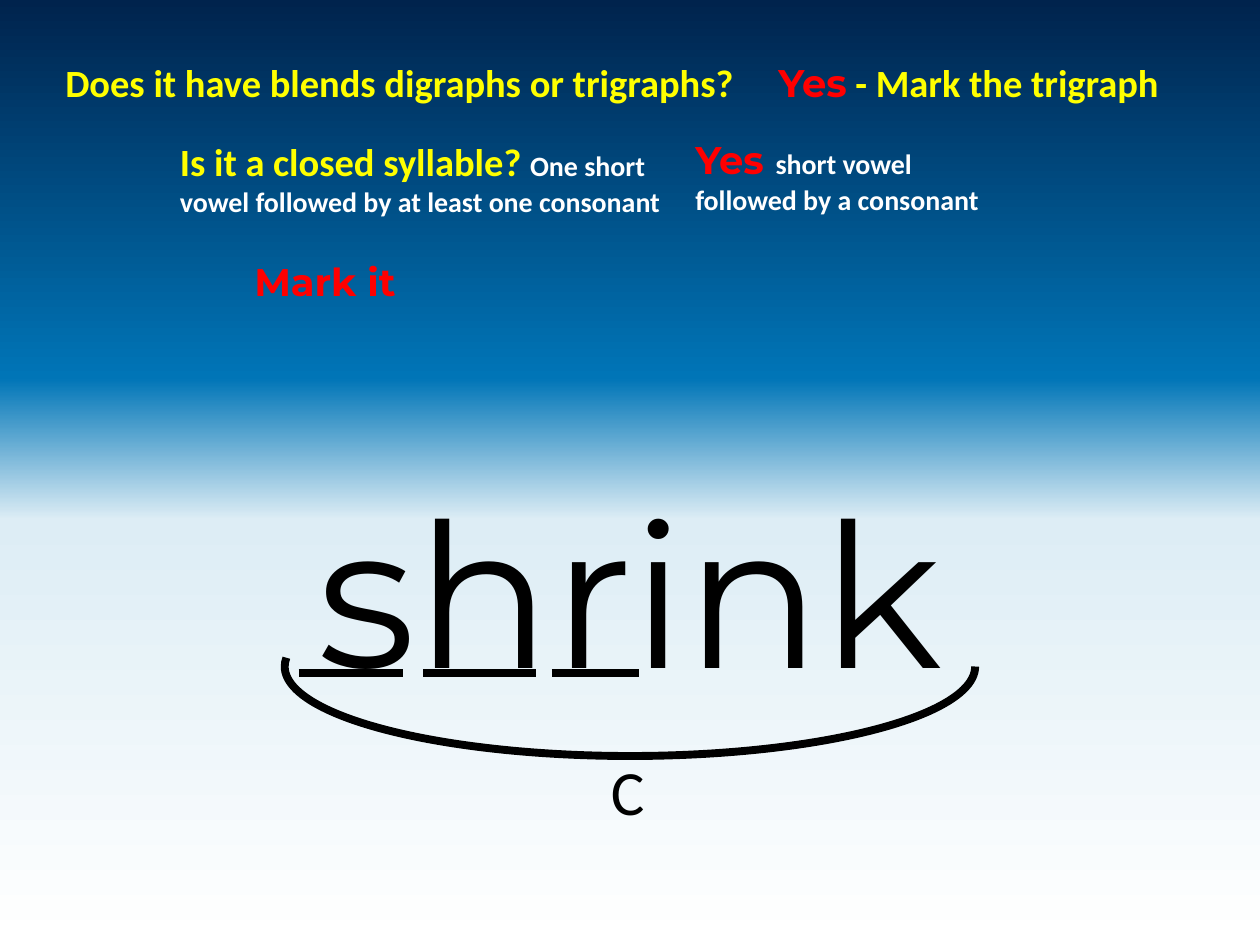
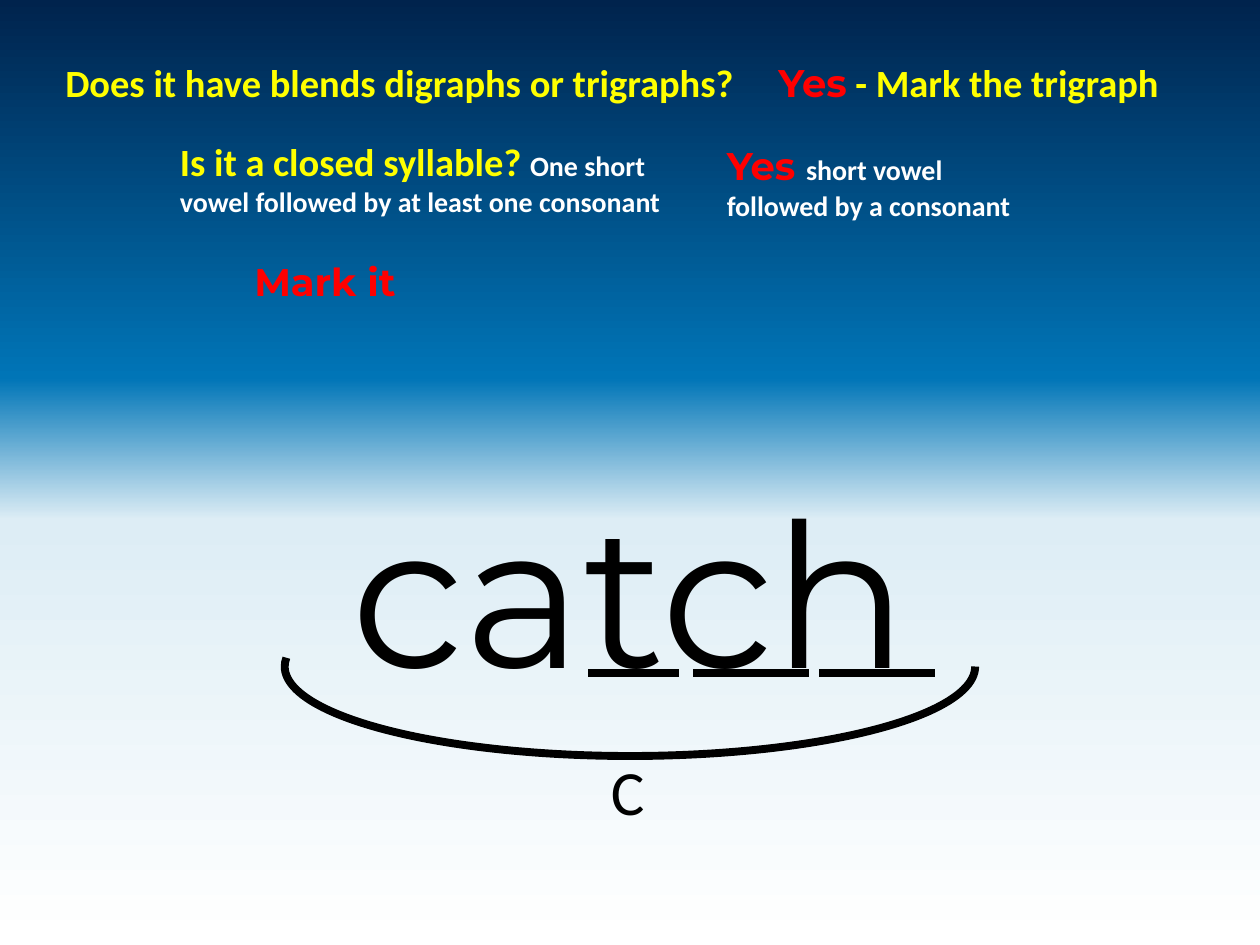
from lxml.etree import SubElement
from pptx import Presentation
from pptx.dml.color import RGBColor
from pptx.enum.shapes import MSO_CONNECTOR as CONN, MSO_SHAPE as SHAPE
from pptx.enum.text import MSO_ANCHOR as ANCHOR, MSO_AUTO_SIZE as AUTO, PP_ALIGN as ALIGN
from pptx.oxml.ns import qn
from pptx.util import Inches, Pt

BLACK = RGBColor(0x00, 0x00, 0x00)
WHITE = RGBColor(0xFF, 0xFF, 0xFF)
YELLOW = RGBColor(0xFF, 0xFF, 0x00)
RED = RGBColor(0xFF, 0x00, 0x00)
PALE = RGBColor(0xDD, 0xED, 0xF5)
BLUE = RGBColor(0x00, 0x75, 0xB7)
NAVY = RGBColor(0x00, 0x23, 0x4D)
BACKDROP = [(0, WHITE), (45, PALE), (60, BLUE), (100, NAVY)]

BODY, DISPLAY = "Calibri", "Montserrat"
WORD = (DISPLAY, 115, BLACK, False)
QUESTION = (BODY, 22, YELLOW, True)
ANSWER = (DISPLAY, 22, RED, True)
GAP = (DISPLAY, 24, RED, True)
DETAIL = (BODY, 16, WHITE, True)
LABEL = (BODY, 36, BLACK, False)

STROKE = Pt(4.5)
BASELINE = 5.34


def style_font(font, style):
    font.name, size, font.color.rgb, font.bold = style
    font.size = Pt(size)


class Deck:
    def __init__(self):
        self.prs = Presentation()
        self.prs.slide_width, self.prs.slide_height = Inches(10), Inches(7.5)
        self.s = None
        self.paint_backdrop()

    def paint_backdrop(self):
        """Put the gradient, running from bottom to top, on the master."""
        master = self.prs.slide_master
        fill = master.background.fill
        fill.gradient()
        fill.gradient_angle = 90
        stops = next(master.element.iter(qn("a:gsLst")))
        for stop in list(stops):
            stops.remove(stop)
        for percent, color in BACKDROP:
            stop = SubElement(stops, qn("a:gs"), pos=str(percent * 1000))
            SubElement(stop, qn("a:srgbClr"), val=str(color))

    def new_slide(self, word):
        self.s = self.prs.slides.add_slide(self.prs.slide_layouts[5])
        title = self.s.shapes.title
        title.left, title.top = Inches(0.5), Inches(2.58)
        title.width, title.height = Inches(9), Inches(4.17)
        tf = title.text_frame
        tf.text = word
        tf.auto_size = AUTO.NONE
        tf.vertical_anchor = ANCHOR.MIDDLE
        p = tf.paragraphs[0]
        p.alignment = ALIGN.CENTER
        style_font(p.font, WORD)

    def text(self, x, y, w, h, *parts, group=None):
        """Add one paragraph of (text, style) parts; a newline breaks the line."""
        shapes = (group or self.s).shapes
        tf = shapes.add_textbox(Inches(x), Inches(y), Inches(w), Inches(h)).text_frame
        tf.word_wrap = False
        tf.auto_size = AUTO.SHAPE_TO_FIT_TEXT
        p = tf.paragraphs[0]
        for content, style in parts:
            for i, line in enumerate(content.split("\n")):
                if i:
                    p.add_line_break()
                r = p.add_run()
                r.text = line
                style_font(p.font if len(parts) == 1 else r.font, style)

    def closed_syllable_mark(self):
        """Add the curve under the word with its C."""
        group = self.s.shapes.add_group_shape()
        arc = group.shapes.add_shape(
            SHAPE.ARC, Inches(2.26), Inches(4.58), Inches(5.48), Inches(1.42))
        arc.adjustments[0], arc.adjustments[1] = 107.12, 0
        arc.element.spPr.find(qn("a:xfrm")).set("flipV", "1")
        arc.shadow.inherit = False
        arc.fill.background()
        arc.line.color.rgb = BLACK
        arc.line.width = STROKE
        self.text(4.75, 5.92, 0.66, 0.71, ("C", LABEL), group=group)

    def underlines(self, spans):
        group = self.s.shapes.add_group_shape()
        for left, right in spans:
            line = group.shapes.add_connector(
                CONN.STRAIGHT, Inches(left), Inches(BASELINE), Inches(right), Inches(BASELINE))
            line.line.color.rgb = BLACK
            line.line.width = STROKE
            SubElement(line.element.spPr, qn("a:effectLst"))

    def word_slide(self, word, reply_box, reply_lead, letter_spans):
        self.new_slide(word)
        self.text(0.42, 0.42, 5.57, 0.47,
                  ("Does it have blends digraphs or trigraphs?", QUESTION))
        self.text(6.08, 0.42, 3.31, 0.47,
                  ("Yes", ANSWER), (" - Mark the trigraph", QUESTION))
        self.text(1.33, 1.05, 4.06, 0.74,
                  ("Is it a closed syllable? ", QUESTION),
                  ("One short \nvowel followed by at least one consonant", DETAIL))
        self.text(*reply_box, *reply_lead,
                  ("short vowel \nfollowed by a consonant", DETAIL))
        self.text(1.92, 2, 1.5, 0.47, ("Mark it", ANSWER))
        self.closed_syllable_mark()
        self.underlines(letter_spans)


def main():
    deck = Deck()
    deck.word_slide("shrink", (5.42, 1, 2.48, 0.77), [("Yes", ANSWER), (" ", GAP)],
                    [(2.37, 3.2), (3.36, 4.25), (4.38, 5.07)])
    deck.word_slide("catch", (5.67, 1.08, 2.48, 0.74), [("Yes ", ANSWER)],
                    [(4.67, 5.39), (5.5, 6.42), (6.5, 7.42)])
    deck.prs.save("out.pptx")


if __name__ == "__main__":
    main()
